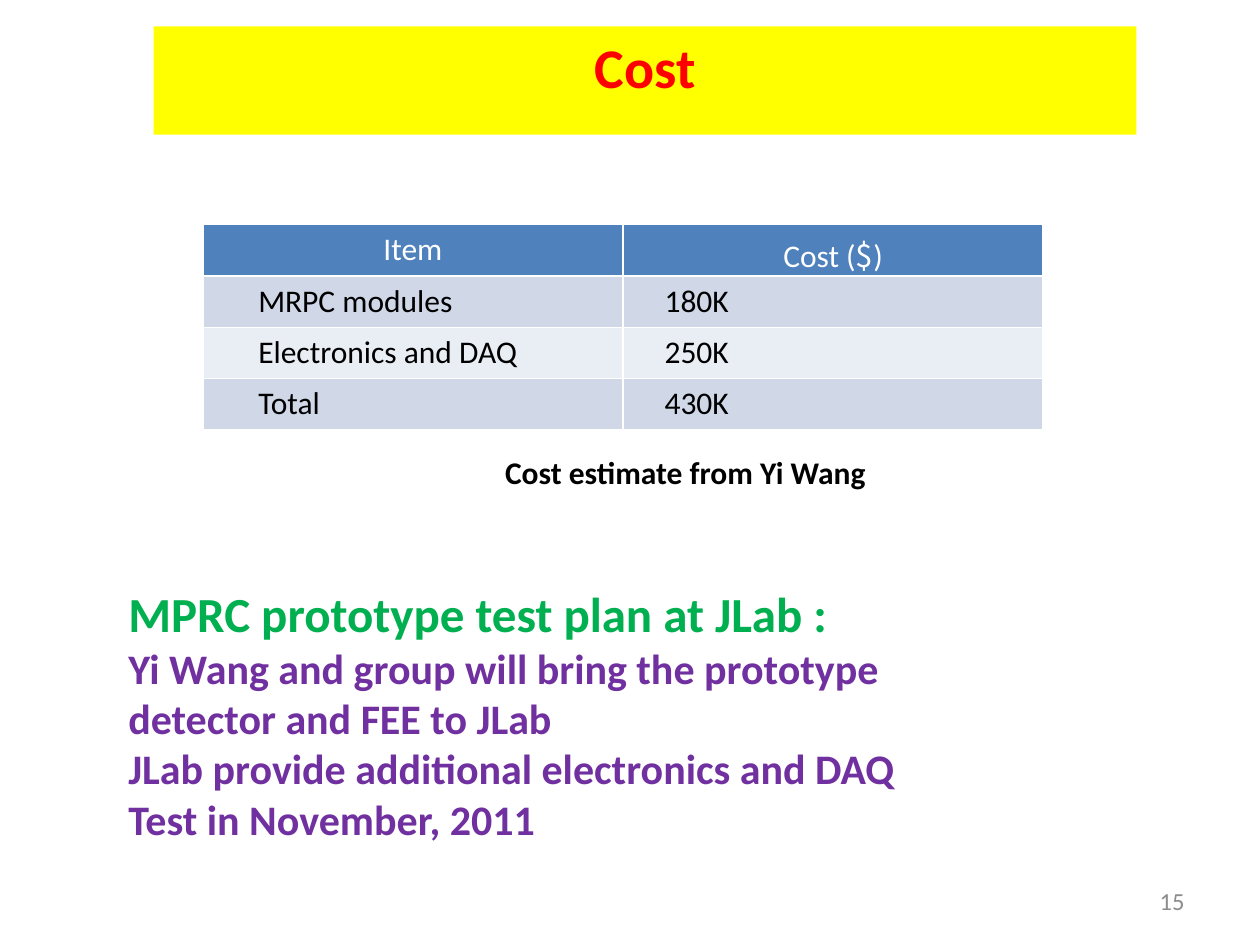
from pptx import Presentation
from pptx import util as u
from pptx.dml.color import RGBColor
from pptx.enum import text

YELLOW = RGBColor(0xFF, 0xFF, 0x00)
RED = RGBColor(0xFF, 0x00, 0x00)
GREEN = RGBColor(0x00, 0xB0, 0x50)
PURPLE = RGBColor(0x70, 0x30, 0xA0)
BLACK = RGBColor(0x00, 0x00, 0x00)
WHITE = RGBColor(0xFF, 0xFF, 0xFF)
GRAY = RGBColor(0x8C, 0x8C, 0x8C)
HEADER_BLUE = RGBColor(0x4F, 0x81, 0xBD)
BANDS = (RGBColor(0xE9, 0xED, 0xF4), RGBColor(0xD0, 0xD8, 0xE8))

FONT = "Calibri"
SYMBOL_FONT = "Noto Sans CJK KR"
ALIGN = text.PP_ALIGN

TITLE = "Cost"
HEADER = (("Item",), ("Cost (", "$", ")"))
COSTS = (
    ("MRPC modules", "180K"),
    ("Electronics and DAQ", "250K"),
    ("Total", "430K"),
)
CELL_INDENTS = (0.44, 0.33)
ROW_HEIGHT = 0.405
CAPTION = "Cost estimate from Yi Wang"
PLAN_HEADING = "MPRC prototype test plan at JLab :"
PLAN = (
    "Yi Wang and group will bring the prototype",
    "detector and FEE to JLab",
    "JLab provide additional electronics and DAQ",
    "Test in November, 2011",
)
PAGE = "15"


def box(left, top, width, height):
    return [u.Inches(side) for side in (left, top, width, height)]


def style(paragraph, size, color, bold=False, align=ALIGN.LEFT):
    paragraph.alignment = align
    for run in paragraph.runs:
        run.font.name = FONT
        run.font.size = u.Pt(size)
        run.font.bold = bold
        run.font.color.rgb = color


def add_lines(slide, place, lines, align=ALIGN.LEFT):
    frame = slide.shapes.add_textbox(*place).text_frame
    frame.word_wrap = False
    frame.text = "\n".join(line for line, *_ in lines)
    for paragraph, (_, size, color, bold) in zip(frame.paragraphs, lines):
        style(paragraph, size, color, bold, align)
    return frame


def add_title(slide):
    title = slide.shapes.title
    title.left, title.top, title.width, title.height = box(1.22, 0.21, 7.8, 0.86)
    title.fill.solid()
    title.fill.fore_color.rgb = YELLOW
    title.text_frame.text = TITLE
    title.text_frame.vertical_anchor = text.MSO_ANCHOR.TOP
    style(title.text_frame.paragraphs[0], 32, RED, True, ALIGN.CENTER)


def add_costs(slide):
    row_count = len(COSTS) + 1
    place = box(1.61, 1.78, 6.67, ROW_HEIGHT * row_count)
    table = slide.shapes.add_table(row_count, len(HEADER), *place).table
    for row in table.rows:
        row.height = u.Inches(ROW_HEIGHT)

    for column, pieces in enumerate(HEADER):
        cell = table.cell(0, column)
        cell.fill.solid()
        cell.fill.fore_color.rgb = HEADER_BLUE
        cell.margin_bottom = 0
        heading = cell.text_frame.paragraphs[0]
        for piece in pieces:
            heading.add_run().text = piece
        style(heading, 18, WHITE, align=ALIGN.CENTER)
        for run in heading.runs:
            if run.text == "$":
                run.font.name = SYMBOL_FONT

    for row, entries in enumerate(COSTS, 1):
        for column, entry in enumerate(entries):
            cell = table.cell(row, column)
            cell.fill.solid()
            cell.fill.fore_color.rgb = BANDS[row % 2]
            cell.margin_left = u.Inches(CELL_INDENTS[column])
            cell.text_frame.text = entry
            style(cell.text_frame.paragraphs[0], 18, BLACK)


def main():
    deck = Presentation()
    deck.slide_width, deck.slide_height = u.Inches(10), u.Inches(7.5)
    slide = deck.slides.add_slide(deck.slide_layouts[5])
    add_title(slide)
    add_costs(slide)
    add_lines(slide, box(3.91, 3.55, 3.09, 0.4), [(CAPTION, 18, BLACK, True)])
    plan = [(PLAN_HEADING, 28, GREEN, True)]
    plan += [(step, 24, PURPLE, True) for step in PLAN]
    add_lines(slide, box(0.92, 4.58, 6.34, 2.49), plan)
    page = add_lines(slide, box(8.98, 6.95, 0.52, 0.4), [(PAGE, 14, GRAY, False)], ALIGN.RIGHT)
    page.word_wrap = True
    page.vertical_anchor = text.MSO_ANCHOR.MIDDLE
    deck.save("out.pptx")


if __name__ == "__main__":
    main()
